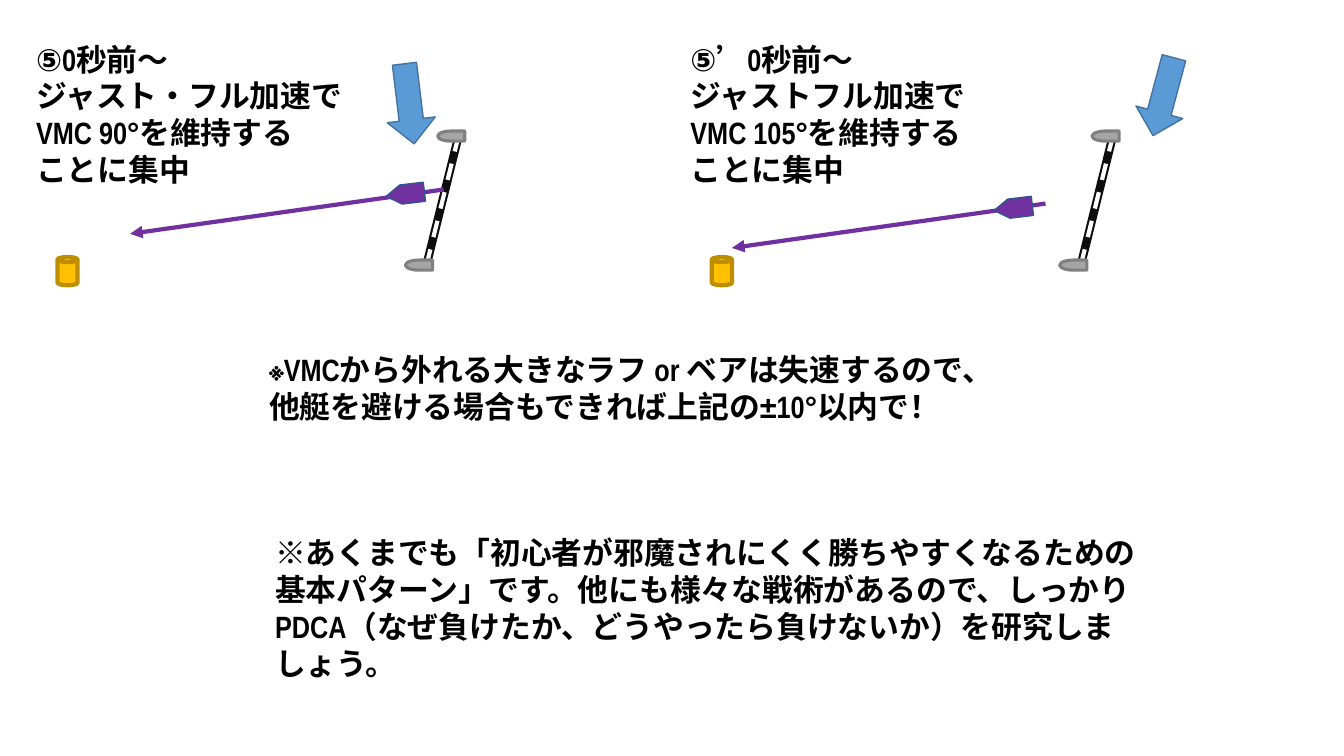
import pptx
import pptx.dml.color
import pptx.enum.dml
import pptx.enum.shapes
import pptx.enum.text
import pptx.oxml.ns
import pptx.util
from dataclasses import dataclass
from lxml import etree

Inches = pptx.util.Inches
SHAPE = pptx.enum.shapes.MSO_SHAPE


@dataclass(frozen=True)
class Theme:
    font: str = "Arial Narrow"
    text_size: float = 22
    text: str = "000000"
    mark: str = "FFC000"
    mark_edge: str = "BD8E00"
    rope: str = "0D0D0D"
    rope_dash: str = "FFFFFF"
    committee: str = "A5A5A5"
    committee_edge: str = "808080"
    boat: str = "7030A0"
    boat_edge: str = "325491"
    wind: str = "5B9BD5"
    wind_edge: str = "43739E"


def rgb(value):
    return pptx.dml.color.RGBColor.from_string(value)


class SlideBuilder:
    def __init__(self, slide, theme):
        self.s = slide
        self.theme = theme

    def text(self, x, y, w, h, lines):
        tf = self.s.shapes.add_textbox(Inches(x), Inches(y), Inches(w), Inches(h)).text_frame
        tf.word_wrap = True
        tf.auto_size = pptx.enum.text.MSO_AUTO_SIZE.SHAPE_TO_FIT_TEXT
        for i, line in enumerate(lines):
            p = tf.add_paragraph() if i else tf.paragraphs[0]
            r = p.add_run()
            r.text = line
            r.font.name = self.theme.font
            r.font.size = pptx.util.Pt(self.theme.text_size)
            r.font.bold = True
            r.font.color.rgb = rgb(self.theme.text)

    def shape(self, kind, x, y, w, h, fill, edge, width=1, rotation=0):
        sp = self.s.shapes.add_shape(kind, Inches(x), Inches(y), Inches(w), Inches(h))
        sp.shadow.inherit = False
        sp.rotation = rotation
        sp.fill.solid()
        sp.fill.fore_color.rgb = rgb(fill)
        sp.line.color.rgb = rgb(edge)
        sp.line.width = pptx.util.Pt(width)
        return sp

    def line(self, start, end, color, width, dashed=False, arrow=False, parent=None):
        shapes = (parent or self.s).shapes
        cxn = shapes.add_connector(pptx.enum.shapes.MSO_CONNECTOR.STRAIGHT,
                                   *(Inches(v) for v in (*start, *end)))
        cxn.line.color.rgb = rgb(color)
        cxn.line.width = pptx.util.Pt(width)
        if dashed:
            cxn.line.dash_style = pptx.enum.dml.MSO_LINE.DASH
        if arrow:
            ln = cxn.line._get_or_add_ln()
            etree.SubElement(ln, pptx.oxml.ns.qn("a:tailEnd"), type="triangle")
        etree.SubElement(cxn._element.spPr, pptx.oxml.ns.qn("a:effectLst"))

    def start_line(self, x):
        t = self.theme
        # Striped rope between the two committee boats
        top, bottom = (x + 4.29, 1.34), (x + 3.97, 2.63)
        group = self.s.shapes.add_group_shape()
        self.line(top, bottom, t.rope, 6, parent=group)
        self.line(top, bottom, t.rope_dash, 3, dashed=True, parent=group)
        for dx, y in ((3.76, 2.58), (4.08, 1.3)):
            self.shape(SHAPE.FLOWCHART_DELAY, x + dx, y, 0.27, 0.1,
                       t.committee, t.committee_edge, 2.25, 180)

    def boat(self, x, y):
        sp = self.shape(SHAPE.PENTAGON, x, y, 0.38, 0.19,
                        self.theme.boat, self.theme.boat_edge, rotation=173.2)
        sp.adjustments[0] = 0.763

    def wind(self, x, y, rotation):
        self.shape(SHAPE.DOWN_ARROW, x, y, 0.48, 0.8,
                   self.theme.wind, self.theme.wind_edge, rotation=rotation)

    def scene(self, x, lines, wind, course, boat):
        t = self.theme
        self.text(x, 0.35, 5.36, 1.58, lines)
        self.shape(SHAPE.CAN, x + 0.31, 2.55, 0.2, 0.28, t.mark, t.mark_edge, 3)
        self.start_line(x)
        self.wind(*wind)
        # Sailed course and the boat on it
        cx, cy = course
        self.line(course, (cx - 3.11, cy + 0.44), t.boat, 3, arrow=True)
        self.boat(*boat)


def main():
    prs = pptx.Presentation()
    prs.slide_width, prs.slide_height = Inches(13.33), Inches(7.5)
    slide = SlideBuilder(prs.slides.add_slide(prs.slide_layouts[6]), Theme())

    # The two starting situations
    slide.scene(0.26, ["⑤0秒前～", "ジャスト・フル加速で", "VMC 90°を維持する", "ことに集中"],
                wind=(3.82, 0.63, 353.1), course=(4.4, 1.88), boat=(3.83, 1.83))
    slide.scene(6.75, ["⑤’0秒前～", "ジャストフル加速で", "VMC 105°を維持する", "ことに集中"],
                wind=(11.3, 0.56, 15), course=(10.37, 2.02), boat=(9.86, 1.97))

    # Notes below
    slide.text(2.57, 3.43, 8.19, 0.84,
               ["※VMCから外れる大きなラフ or ベアは失速するので、",
                "他艇を避ける場合もできれば上記の±10°以内で！"])
    slide.text(2.63, 5.25, 8.98, 1.95,
               ["※あくまでも「初心者が邪魔されにくく勝ちやすくなるための基本パターン」です。"
                "他にも様々な戦術があるので、しっかりPDCA（なぜ負けたか、"
                "どうやったら負けないか）を研究しましょう。"])
    prs.save("out.pptx")


if __name__ == "__main__":
    main()
